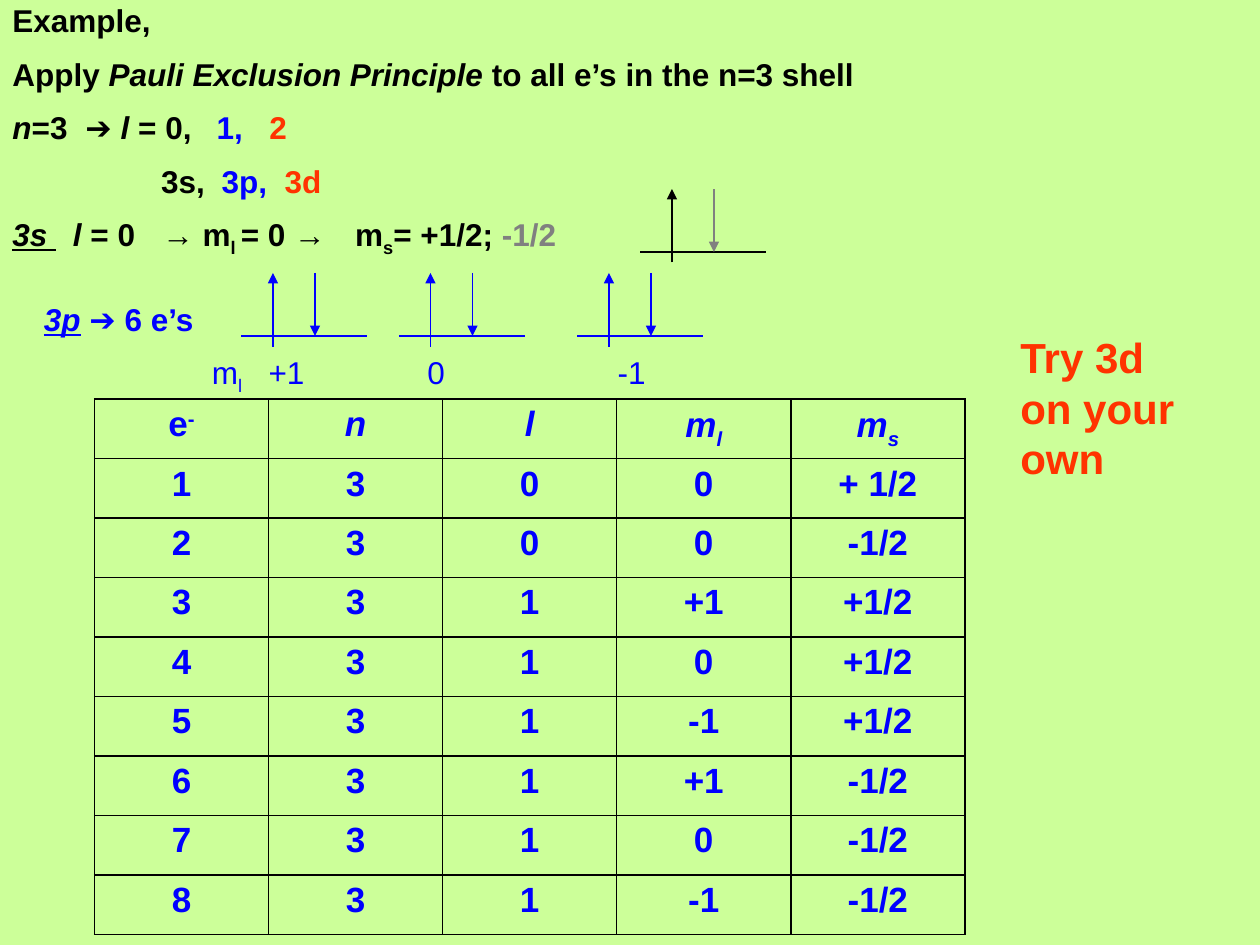
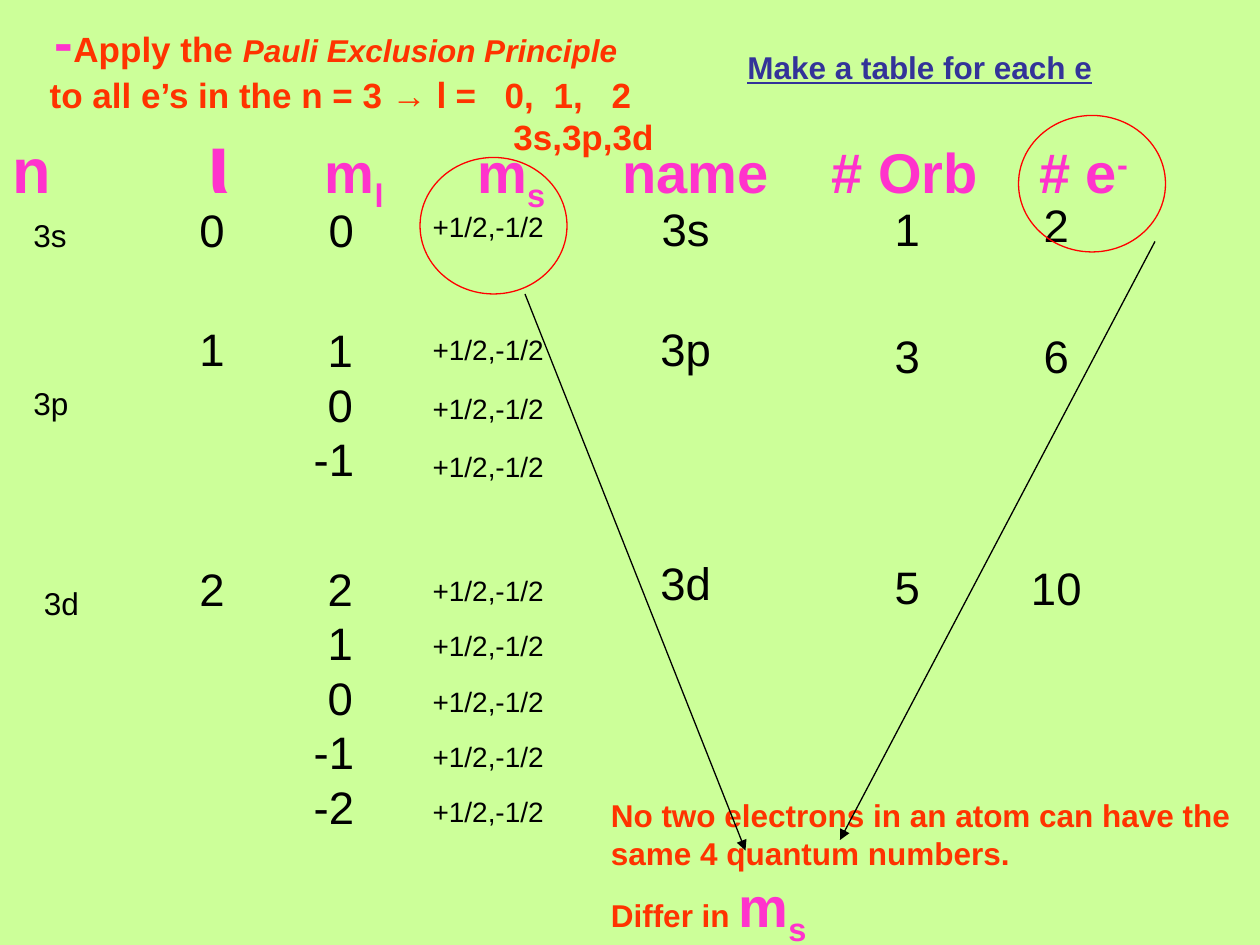
from dataclasses import dataclass, replace
from typing import NamedTuple, Optional

from lxml.etree import SubElement
from pptx import Presentation
from pptx.dml.color import RGBColor
from pptx.enum.shapes import MSO_CONNECTOR, MSO_SHAPE
from pptx.enum.text import MSO_ANCHOR, MSO_AUTO_SIZE, PP_ALIGN
from pptx.oxml.ns import qn
from pptx.util import Inches, Pt

# Shared colours
LIME = RGBColor(0xCC, 0xFF, 0x99)
BLACK = RGBColor(0, 0, 0)
BLUE = RGBColor(0, 0, 0xFF)
ORANGE = RGBColor(0xFF, 0x33, 0)
PINK = RGBColor(0xFF, 0x33, 0xCC)
GRAY = RGBColor(0x80, 0x80, 0x80)
INDIGO = RGBColor(0x33, 0x33, 0x99)
RED = RGBColor(0xFF, 0, 0)

# The slide is a grid of 120 columns by 90 rows
SLIDE_WIDTH, SLIDE_HEIGHT = Inches(10), Inches(7.5)
COLUMN, ROW = SLIDE_WIDTH / 120, SLIDE_HEIGHT / 90


@dataclass(frozen=True)
class Style:
    size: Optional[float] = None
    color: Optional[RGBColor] = None
    bold: Optional[bool] = None
    italic: Optional[bool] = None
    underline: Optional[bool] = None
    name: Optional[str] = None
    baseline: int = 0


@dataclass(frozen=True)
class Line:
    """A paragraph: runs are strings or (string, style) pairs, tabs are in inches."""
    runs: tuple
    style: Style
    tabs: tuple = ()
    before: float = 0
    spacing: Optional[float] = None
    align: PP_ALIGN = PP_ALIGN.LEFT


class Box(NamedTuple):
    left: float
    top: float
    width: float
    height: float


class Value(NamedTuple):
    lines: tuple
    center: float
    top: float


class SpinPair(NamedTuple):
    left: float
    axis: float
    color: RGBColor
    down_color: RGBColor


# Shared text styles
BODY = Style(18, BLACK, name="Arial")
BOLD = replace(BODY, bold=True)
CLAIM = replace(BOLD, color=ORANGE)
CLAIM_LARGE = replace(CLAIM, size=20)
HEADING = replace(BOLD, size=32, color=PINK)
NUMBER = replace(BODY, size=26)
SPIN = replace(BODY, size=16)
CELL = replace(BOLD, size=20, color=BLUE)
ITALIC = Style(italic=True)
SUB = Style(baseline=-25000)
SUPER = Style(baseline=30000)


def apply_style(font, style: Style) -> None:
    for field in ("bold", "italic", "underline", "name"):
        if getattr(style, field) is not None:
            setattr(font, field, getattr(style, field))
    if style.size:
        font.size = Pt(style.size)
    if style.color is not None:
        font.color.rgb = style.color


def write_lines(frame, lines) -> None:
    for index, line in enumerate(lines):
        paragraph = frame.add_paragraph() if index else frame.paragraphs[0]
        if line.tabs:
            tab_list = SubElement(paragraph._p.get_or_add_pPr(), qn("a:tabLst"))
            for position in line.tabs:
                SubElement(tab_list, qn("a:tab"), pos=str(Inches(position)), algn="l")
        paragraph.alignment = line.align
        if index and line.before:
            paragraph.space_before = Pt(line.before)
        if line.spacing:
            paragraph.line_spacing = line.spacing
        apply_style(paragraph.font, line.style)
        for item in line.runs:
            text, style = (item, Style()) if isinstance(item, str) else item
            run = paragraph.add_run()
            run.text = text
            apply_style(run.font, style)
            if style.baseline:
                run._r.get_or_add_rPr().set("baseline", str(style.baseline))


def place(box: Box) -> tuple:
    return tuple(round(length) for length in (
        box.left * COLUMN, box.top * ROW, box.width * COLUMN, box.height * ROW))


def add_text(slide, box: Box, *lines: Line, middle: bool = False, wrap: bool = True) -> None:
    frame = slide.shapes.add_textbox(*place(box)).text_frame
    frame.word_wrap = wrap
    frame.auto_size = MSO_AUTO_SIZE.SHAPE_TO_FIT_TEXT
    frame.vertical_anchor = MSO_ANCHOR.MIDDLE if middle else MSO_ANCHOR.TOP
    write_lines(frame, lines)


def add_line(slide, start: tuple, end: tuple, color: RGBColor, arrow: bool = True) -> None:
    ends = [round(length) for x, y in (start, end) for length in (x * COLUMN, y * ROW)]
    connector = slide.shapes.add_connector(MSO_CONNECTOR.STRAIGHT, *ends)
    connector.line.color.rgb = color
    connector.line.width = Pt(0.75)
    properties = connector._element.spPr
    if arrow:
        SubElement(properties.find(qn("a:ln")), qn("a:tailEnd"), type="triangle")
    SubElement(properties, qn("a:effectLst"))


def add_spin_pair(slide, pair: SpinPair) -> None:
    left, axis = pair.left, pair.axis
    add_line(slide, (left, axis), (left + 12, axis), pair.color, arrow=False)
    add_line(slide, (left + 3, axis + 1), (left + 3, axis - 6), pair.color)
    add_line(slide, (left + 7, axis - 6), (left + 7, axis), pair.down_color)


def add_ring(slide, left: float, top: float) -> None:
    ring = slide.shapes.add_shape(MSO_SHAPE.OVAL, *place(Box(left, top, 14, 13)))
    ring.shadow.inherit = False
    ring.fill.background()
    ring.line.color.rgb = RED
    ring.line.width = Pt(0.75)


def add_values(slide, values, style: Style, width: float, first: float, step: float,
               spacing: Optional[float] = None) -> None:
    """Centre each stack of values on its column; its height follows its line count."""
    for value in values:
        height = first + step * (len(value.lines) - 1)
        box = Box(value.center - width / 2, value.top, width, height)
        lines = [Line((text,), style, spacing=spacing if index else None, align=PP_ALIGN.CENTER)
                 for index, text in enumerate(value.lines)]
        add_text(slide, box, *lines, middle=True, wrap=False)


def add_quantum_table(slide, box: Box, rows) -> None:
    table = slide.shapes.add_table(len(rows), len(rows[0]), *place(box)).table
    table.first_row = table.horz_banding = False
    for row, contents in zip(table.rows, rows):
        row.height = round(box.height * ROW / len(rows))
        for cell, runs in zip(row.cells, contents):
            cell.margin_left = cell.margin_right = Inches(0.07)
            cell.margin_top = cell.margin_bottom = 0
            for edge in ("lnL", "lnR", "lnT", "lnB"):
                border = SubElement(cell._tc.get_or_add_tcPr(), qn(f"a:{edge}"), w=str(Pt(1)))
                fill = SubElement(border, qn("a:solidFill"))
                SubElement(fill, qn("a:srgbClr"), val=str(BLACK))
            cell.fill.background()
            write_lines(cell.text_frame,
                        [Line(runs, CELL, spacing=1.15, align=PP_ALIGN.CENTER)])


def build_example(slide) -> None:
    # Quantum numbers of the first eight electrons
    italic_sub = replace(SUB, italic=True)
    header = (("e", ("-", SUPER)), (("n", ITALIC),), (("l", ITALIC),),
              (("m", ITALIC), ("l", italic_sub)), (("m", ITALIC), ("s", italic_sub)))
    electrons = [("0", "0", "+ 1/2"), ("0", "0", "-1/2")]
    electrons += [("1", m_l, m_s) for m_s in ("+1/2", "-1/2") for m_l in ("+1", "0", "-1")]
    rows = [header] + [tuple((text,) for text in (str(number), "3", *electron))
                       for number, electron in enumerate(electrons, 1)]
    add_quantum_table(slide, Box(9, 38, 82.9, 51), rows)

    # Worked steps
    blue, orange = Style(color=BLUE), Style(color=ORANGE)
    steps = (
        (("Example,",), ()),
        (("Apply ", ("Pauli Exclusion Principle", ITALIC), " to all e’s in the n=3 shell"), ()),
        ((("n", ITALIC), "=3\t➔ ", ("l ", ITALIC), "= 0,\t", ("1,\t", blue), ("2", orange)),
         (0.58, 1.62, 2.04)),
        (("\t3s,\t", ("3p,\t", blue), ("3d", orange)), (1.18, 1.66, 2.16)),
        ((("3s", Style(italic=True, underline=True)), (" ", Style(underline=True)), "\t",
          ("l ", ITALIC), "= 0\t→ m", ("l ", SUB), "= 0 →\tm", ("s", SUB), "= +1/2; ",
          ("-1/2", Style(color=GRAY))), (0.48, 1.19, 2.72)),
    )
    add_text(slide, Box(0, -0.5, 94, 26.5),
             *(Line(runs, BOLD, tabs, before=9) for runs, tabs in steps))
    add_text(slide, Box(3, 28, 20, 4.8),
             Line((("3p", Style(italic=True, underline=True)), " ➔ 6 e’s"),
                  replace(BOLD, color=BLUE)))

    # Spin diagrams: 3s, then the three 3p orbitals
    add_spin_pair(slide, SpinPair(61, 24, BLACK, GRAY))
    for left in (23, 38, 55):
        add_spin_pair(slide, SpinPair(left, 32, BLUE, BLUE))
    add_text(slide, Box(19, 33, 48, 4.8),
             Line(("m", ("l", SUB), "\t+1\t0\t-1"), replace(BODY, color=BLUE),
                  (0.45, 1.71, 3.22)))
    add_text(slide, Box(96, 31, 19, 15.7),
             Line(("Try 3d on your own",), replace(CLAIM, size=24)))


def build_orbital_table(slide) -> None:
    # Task and column headings
    add_text(
        slide, Box(-10, 0, 84, 15.6),
        Line((("\t-", Style(32, PINK)), "Apply the ",
              ("Pauli Exclusion Principle", Style(18, italic=True))), CLAIM_LARGE, (1.17,)),
        Line(("\tto all e’s in the n = 3 → ", ("l", Style(name="Roboto Condensed")),
              " =\t0,\t1,\t2"), CLAIM_LARGE, (1.13, 4.74, 5.13, 5.59)),
        Line(("\t3s,3p,3d",), CLAIM_LARGE, (4.81,)), middle=True)
    add_text(
        slide, Box(0, 10, 120, 10.8),
        Line((("n", Style(36)), "\t", ("ι", Style(48)), "\tm", ("l", SUB), "\tm", ("s", SUB),
              "\tname\t# Orb\t# e", ("-", SUPER)), HEADING,
             (1.55, 2.48, 3.69, 4.84, 6.5, 8.15)), middle=True)

    # Values of l, m_l, name, orbitals and electrons for each subshell
    l_center, ml_center, ms_center = 20.2, 31.8, 46.5
    name_center, orbital_center, electron_center = 65.3, 86.4, 100.6
    numbers = (
        Value(("0",), l_center, 18.6), Value(("0",), 32.5, 18.6),
        Value(("3s",), name_center, 18.5), Value(("1",), orbital_center, 18.5),
        Value(("2",), electron_center, 18.2),
        Value(("1",), l_center, 30), Value((" 1", " 0", "-1"), ml_center, 30.1),
        Value(("3p",), name_center, 30), Value(("3",), orbital_center, 30.6),
        Value(("6",), electron_center, 30.6),
        Value(("2",), l_center, 52.8), Value((" 2", " 1", " 0", "-1", "-2"), ml_center, 52.8),
        Value(("3d",), name_center, 52.3), Value(("5",), orbital_center, 52.6),
        Value(("10",), electron_center, 52.7),
    )
    add_values(slide, numbers, NUMBER, width=7.8, first=6.4, step=5.2)
    spins = "+1/2,-1/2"
    for count, top, step, spacing in ((1, 19.4, 0, None), (3, 31, 5.64, 1.75),
                                      (5, 54, 5.28, 1.65)):
        add_values(slide, [Value((spins,) * count, ms_center, top)], SPIN,
                   width=13.2, first=4.4, step=step, spacing=spacing)
    for text, left, top in (("3s", 2, 20), ("3p", 2, 36), ("3d", 3, 55)):
        add_text(slide, Box(left, top, 5.8, 4.8), Line((text,), BODY), wrap=False)

    # Instruction and conclusion
    add_text(slide, Box(70, 4, 42, 4.8),
             Line(("Make a table for each e",), replace(BOLD, color=INDIGO, underline=True)))
    add_text(slide, Box(57, 75.2, 66, 14.8),
             Line(("No two electrons in an atom can have the",), CLAIM),
             Line(("same 4 quantum numbers.",), CLAIM),
             Line(("Differ in ", ("m", Style(32, PINK)),
                   ("s", replace(SUB, size=32, color=PINK))), CLAIM))

    # Circled columns and their arrows
    add_ring(slide, 40, 15)
    add_line(slide, (50, 28), (71, 81), BLACK)
    add_ring(slide, 97, 11)
    add_line(slide, (110, 23), (80, 80), BLACK)


def main() -> None:
    presentation = Presentation()
    presentation.slide_width, presentation.slide_height = SLIDE_WIDTH, SLIDE_HEIGHT
    background = presentation.slide_master.background.fill
    background.solid()
    background.fore_color.rgb = LIME
    blank = presentation.slide_layouts[6]
    for build in (build_example, build_orbital_table):
        build(presentation.slides.add_slide(blank))
    presentation.save("out.pptx")


if __name__ == "__main__":
    main()
